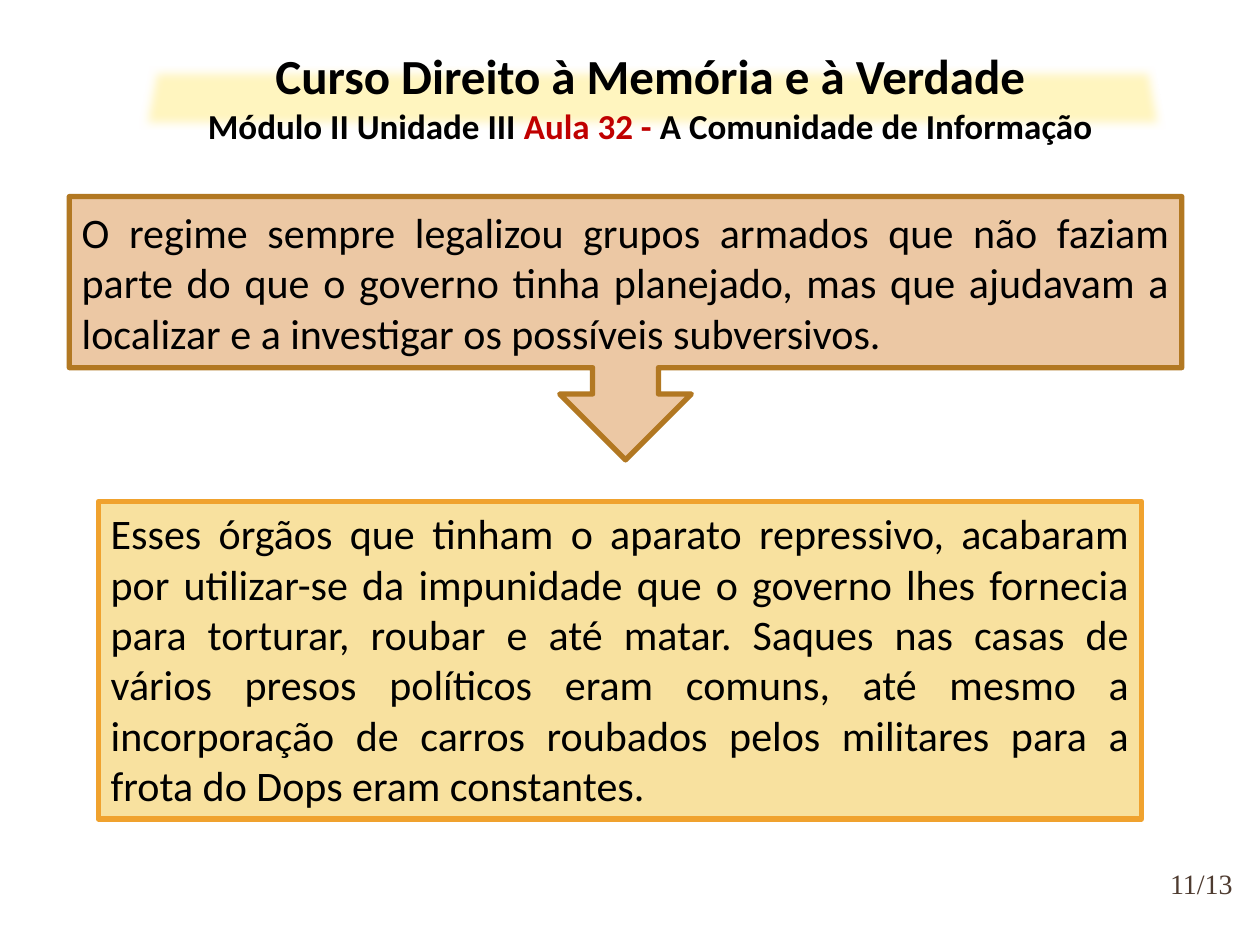
from dataclasses import dataclass

import lxml.etree
import pptx
import pptx.dml.color
import pptx.enum.shapes
import pptx.enum.text
import pptx.oxml.ns
import pptx.util

Inches = pptx.util.Inches
Shape = pptx.enum.shapes.MSO_SHAPE
Align = pptx.enum.text.PP_ALIGN
Anchor = pptx.enum.text.MSO_ANCHOR


@dataclass(frozen=True)
class Theme:
    font: str = "Calibri"
    serif: str = "Times New Roman"
    ink: str = "000000"
    red: str = "C00000"
    brown: str = "4E3B30"
    glow: str = "FFF5BF"
    head: int = 28
    sub: int = 20
    body: int = 24
    page: int = 16
    line: int = 3


@dataclass(frozen=True)
class Area:
    left: float
    top: float
    width: float
    height: float

    def spread(self) -> tuple:
        return tuple(Inches(n) for n in (self.left, self.top, self.width, self.height))


@dataclass(frozen=True)
class Panel:
    kind: Shape
    area: Area
    fill: str
    line: str
    anchor: Anchor
    text: str


THEME = Theme()

PANELS = (
    Panel(Shape.RECTANGLE, Area(0.78, 3.98, 8.28, 2.52), "F8E19F", "F0A22E", Anchor.TOP,
          "Esses órgãos que tinham o aparato repressivo, acabaram por utilizar-se da "
          "impunidade que o governo lhes fornecia para torturar, roubar e até matar. "
          "Saques nas casas de vários presos políticos eram comuns, até mesmo a "
          "incorporação de carros roubados pelos militares para a frota do Dops eram "
          "constantes."),
    Panel(Shape.DOWN_ARROW_CALLOUT, Area(0.55, 1.56, 8.83, 2.09), "ECC8A4", "B27822",
          Anchor.MIDDLE,
          "O regime sempre legalizou grupos armados que não faziam parte do que o "
          "governo tinha planejado, mas que ajudavam a localizar e a investigar os "
          "possíveis subversivos."),
)


def tint(code: str) -> pptx.dml.color.RGBColor:
    return pptx.dml.color.RGBColor.from_string(code)


def style(font, size: int, color: str = THEME.ink, name: str = THEME.font,
          bold: bool = False) -> None:
    font.name = name
    font.size = pptx.util.Pt(size)
    font.bold = bold
    font.color.rgb = tint(color)


def draw_panel(slide, panel: Panel) -> None:
    shape = slide.shapes.add_shape(panel.kind, *panel.area.spread())
    shape.shadow.inherit = False
    shape.fill.solid()
    shape.fill.fore_color.rgb = tint(panel.fill)
    shape.line.color.rgb = tint(panel.line)
    shape.line.width = pptx.util.Pt(THEME.line)
    frame = shape.text_frame
    frame.word_wrap = True
    frame.vertical_anchor = panel.anchor
    frame.text = panel.text
    para = frame.paragraphs[0]
    para.alignment = Align.JUSTIFY
    style(para.runs[0].font, THEME.body)


def draw_title(slide) -> None:
    title = slide.shapes.title
    title.left, title.top, title.width, title.height = Area(1.02, 0.31, 8.28, 0.91).spread()
    frame = title.text_frame
    frame.word_wrap = True
    frame.auto_size = pptx.enum.text.MSO_AUTO_SIZE.NONE
    frame.vertical_anchor = Anchor.TOP
    frame.text = "Curso Direito à Memória e à Verdade"
    head = frame.paragraphs[0]
    style(head.runs[0].font, THEME.head, bold=True)
    sub = frame.add_paragraph()
    for text, color in (("Módulo II Unidade III ", THEME.ink),
                        ("Aula 32 - ", THEME.red),
                        ("A Comunidade de Informação", THEME.ink)):
        run = sub.add_run()
        run.text = text
        style(run.font, THEME.sub, color, bold=True)
    for para in frame.paragraphs:
        para.alignment = Align.CENTER


def draw_glow(slide) -> None:
    band = slide.shapes.add_shape(Shape.TRAPEZOID, *Area(1.08, 0.53, 8.18, 0.5).spread())
    band.adjustments[0] = 0.2
    band.shadow.inherit = False
    band.fill.solid()
    band.fill.fore_color.rgb = tint(THEME.glow)
    band.line.fill.background()
    qn = pptx.oxml.ns.qn
    effect = band.element.spPr.find(qn("a:effectLst"))
    lxml.etree.SubElement(effect, qn("a:softEdge"), rad=str(Inches(0.08)))
    slide.shapes.title.element.addprevious(band.element)


def draw_page(slide) -> None:
    frame = slide.shapes.add_textbox(*Area(9.2, 6.76, 0.67, 0.5).spread()).text_frame
    frame.margin_left = frame.margin_right = frame.margin_top = frame.margin_bottom = 0
    frame.word_wrap = True
    frame.vertical_anchor = Anchor.MIDDLE
    frame.text = "11/13"
    para = frame.paragraphs[0]
    para.alignment = Align.CENTER
    style(para.runs[0].font, THEME.page, THEME.brown, THEME.serif)


def main() -> None:
    deck = pptx.Presentation()
    deck.slide_width, deck.slide_height = Inches(10), Inches(7.5)
    slide = deck.slides.add_slide(deck.slide_layouts.get_by_name("Title Only"))
    draw_title(slide)
    draw_glow(slide)
    draw_page(slide)
    for panel in PANELS:
        draw_panel(slide, panel)
    deck.save("out.pptx")


if __name__ == "__main__":
    main()
